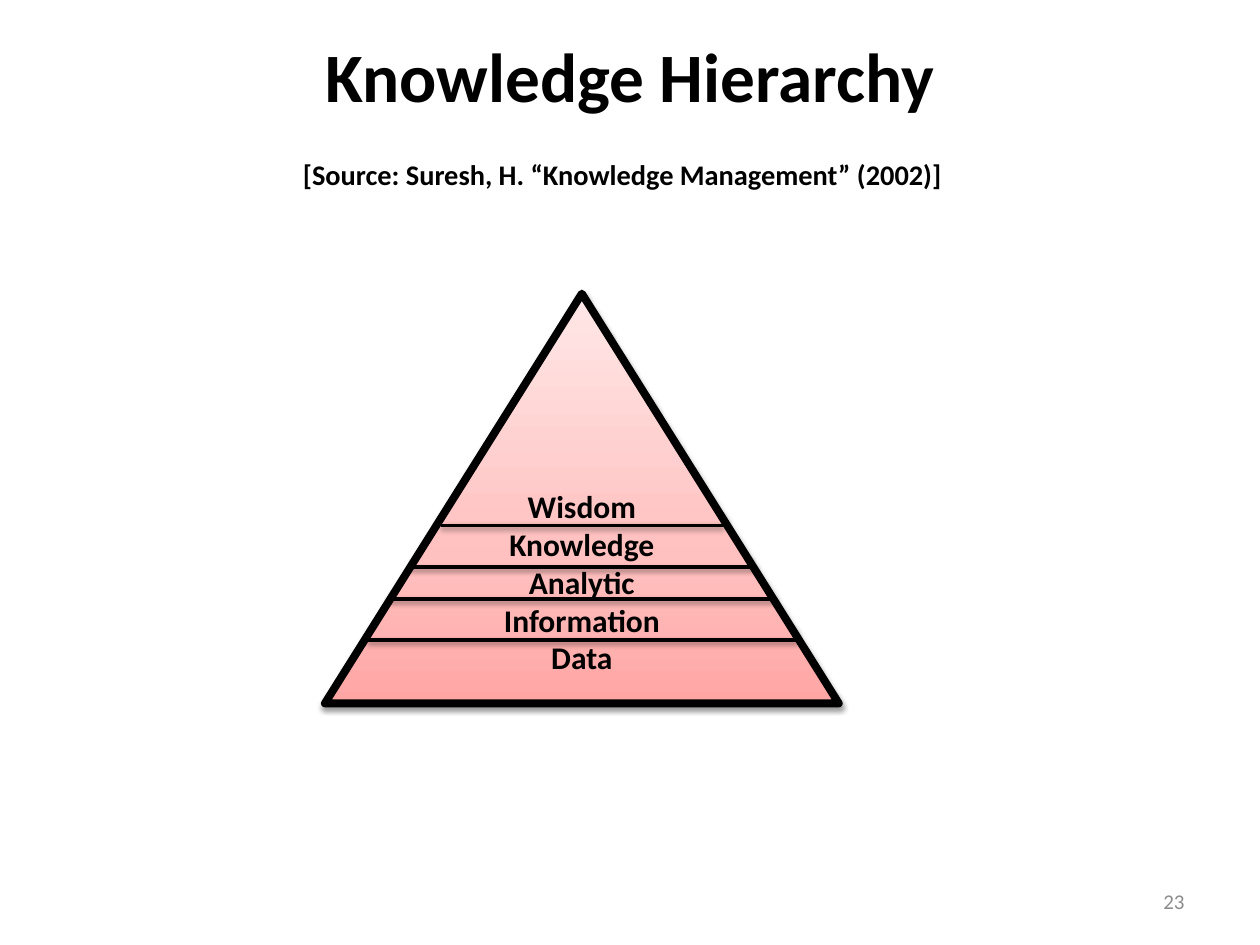
"""Build the Knowledge Hierarchy slide with its layered pyramid."""
from lxml.etree import SubElement
from pptx import Presentation
from pptx.dml.color import RGBColor
from pptx.enum.shapes import MSO_CONNECTOR, MSO_SHAPE
from pptx.enum.text import MSO_ANCHOR, PP_ALIGN
from pptx.oxml import parse_xml
from pptx.oxml.ns import nsdecls, qn
from pptx.util import Cm, Pt

BLACK = RGBColor(0x00, 0x00, 0x00)
GREY = RGBColor(0x8C, 0x8C, 0x8C)
ROSE = RGBColor(0xFF, 0xA6, 0xA5)
PINK = RGBColor(0xFF, 0xC0, 0xBF)
BLUSH = RGBColor(0xFF, 0xE7, 0xE7)


def add_span(para, text, size, color=BLACK, bold=True):
    span = para.add_run()
    span.text = text
    span.font.color.rgb = color
    for name, value in {"name": "Calibri", "size": Pt(size), "bold": bold}.items():
        setattr(span.font, name, value)


def outline_with_shadow(item, width):
    item.line.color.rgb = BLACK
    item.line.width = Pt(width)
    item._element.spPr.append(parse_xml(
        f'<a:effectLst {nsdecls("a")}><a:outerShdw blurRad="{Pt(3.1)}" dist="{Pt(1.6)}" '
        f'dir="5400000" rotWithShape="0"><a:srgbClr val="{BLACK}"><a:alpha val="38000"/>'
        '</a:srgbClr></a:outerShdw></a:effectLst>'))


deck = Presentation()
deck.slide_width, deck.slide_height = Cm(25.4), Cm(19.05)
page = deck.slides.add_slide(deck.slide_layouts[6])
frame_format = {"word_wrap": True, "vertical_anchor": MSO_ANCHOR.MIDDLE}

title_box = page.shapes.add_textbox(Cm(1.27), Cm(0.76), Cm(22.86), Cm(3.18))
pyramid = page.shapes.add_shape(
    MSO_SHAPE.ISOSCELES_TRIANGLE, Cm(6.55), Cm(5.92), Cm(10.36), Cm(8.26))
number_box = page.shapes.add_textbox(Cm(18.21), Cm(17.65), Cm(5.92), Cm(1.02))
for box in (title_box, pyramid, number_box):
    for name, value in frame_format.items():
        setattr(box.text_frame, name, value)

para = title_box.text_frame.paragraphs[0]
para.alignment = PP_ALIGN.CENTER
add_span(para, "Knowledge Hierarchy", 39.6)
para.add_line_break()
add_span(para, "[Source: Suresh, H. “Knowledge Management” (2002)]", 16.2)
add_span(para, " ", 39.6)

pyramid.fill.gradient()
pyramid.fill.gradient_angle = 90
stops = pyramid._element.spPr.find(qn("a:gradFill")).find(qn("a:gsLst"))
stops.clear()
for percent, color in ((0, ROSE), (35, PINK), (100, BLUSH)):
    stop = SubElement(stops, qn("a:gs"), pos=str(percent * 1000))
    SubElement(stop, qn("a:srgbClr"), val=str(color))
pyramid._element.spPr.find(qn("a:gradFill")).find(qn("a:lin")).set("ang", "16200000")
outline_with_shadow(pyramid, 4.5)

pyramid.text_frame.margin_bottom = Cm(0.9)
for index, level in enumerate(("Wisdom", "Knowledge", "Analytic", "Information", "Data")):
    para = pyramid.text_frame.paragraphs[0] if index == 0 else pyramid.text_frame.add_paragraph()
    para.alignment = PP_ALIGN.CENTER
    add_span(para, level, 18)

dividers = ((8.89, 14.61, 10.59), (8.26, 15.24, 11.43), (7.82, 15.67, 12.07), (7.42, 16.08, 12.9))
for left, right, height in dividers:
    divider = page.shapes.add_connector(
        MSO_CONNECTOR.STRAIGHT, Cm(left), Cm(height), Cm(right), Cm(height))
    outline_with_shadow(divider, 2)

para = number_box.text_frame.paragraphs[0]
para.alignment = PP_ALIGN.RIGHT
add_span(para, "23", 12, GREY, False)

deck.save("out.pptx")
